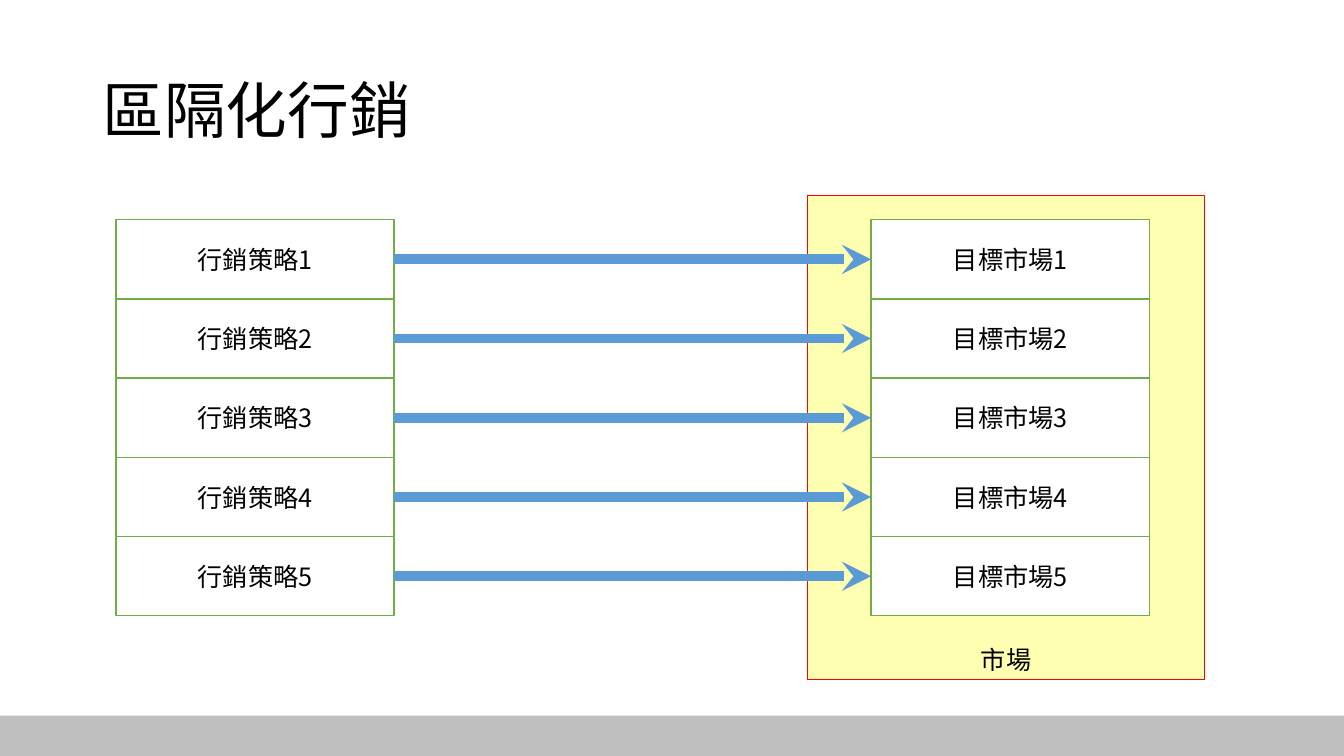
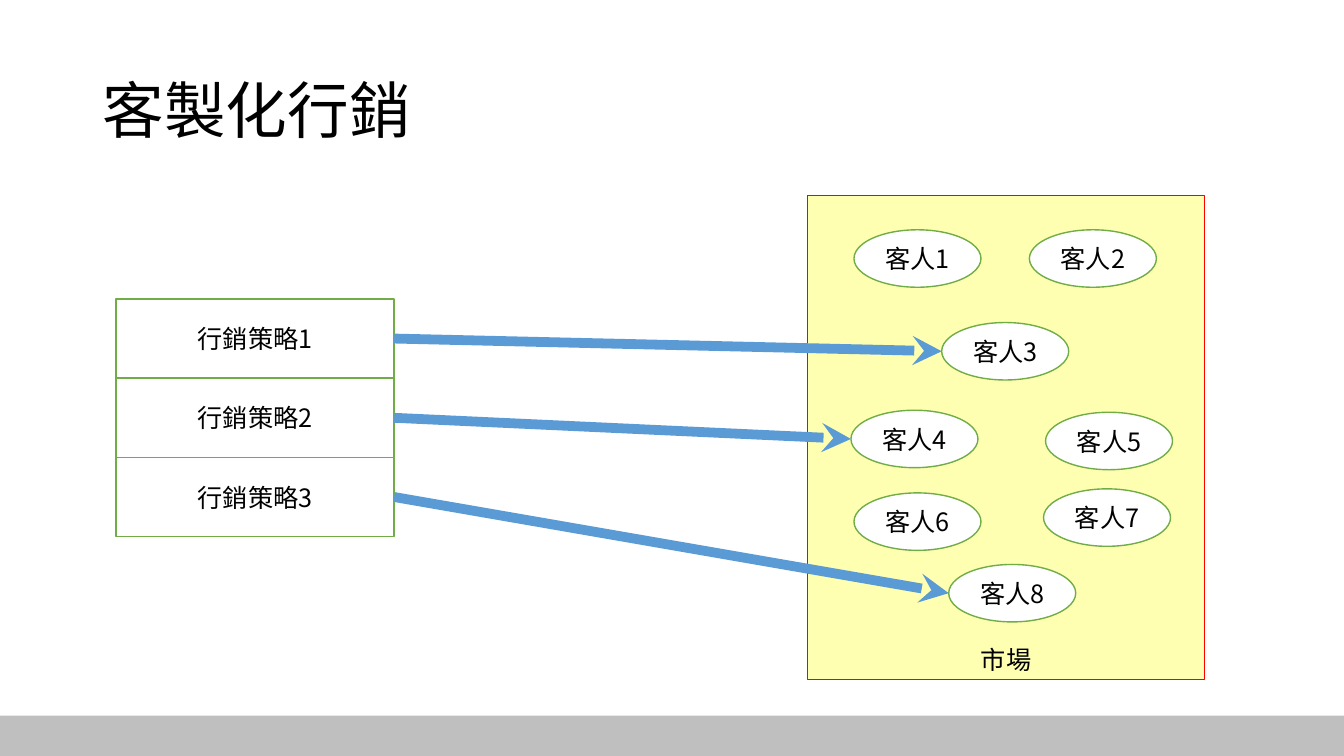
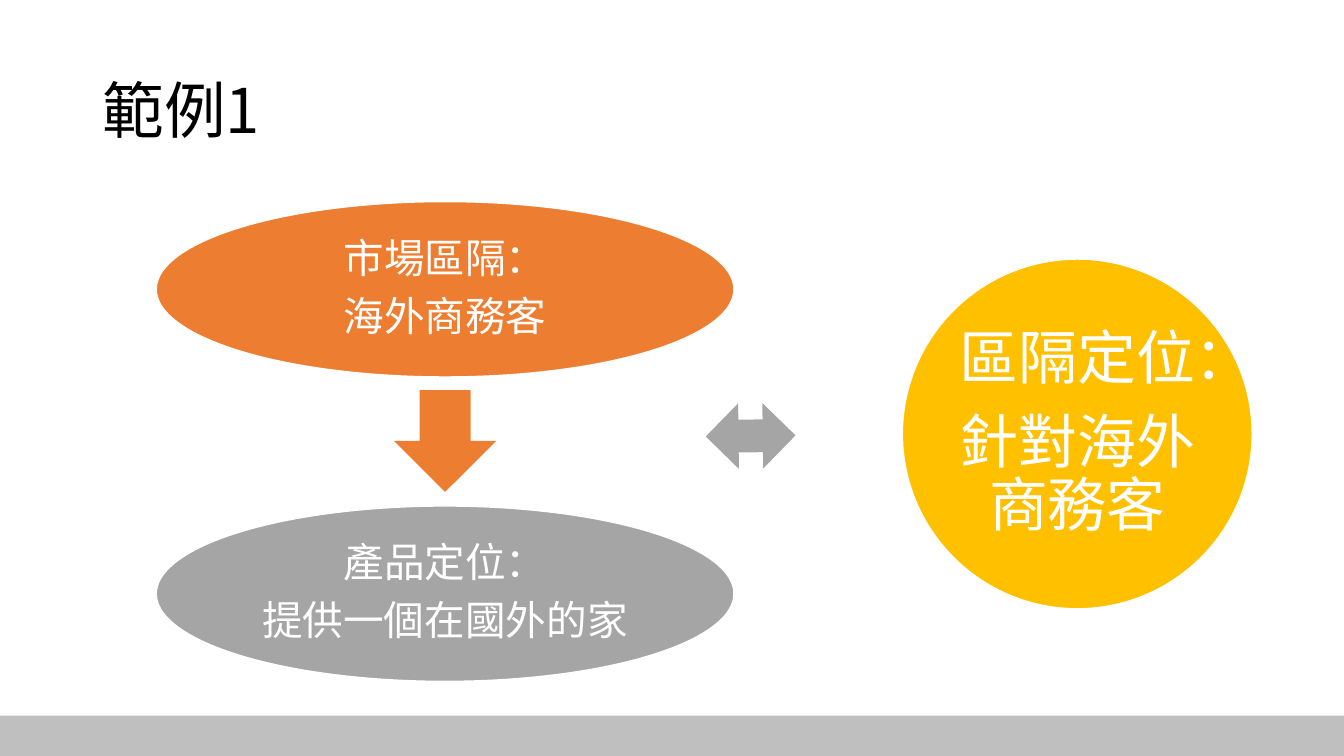
"""Build three slides on segmented and customised marketing."""
from lxml.etree import SubElement
from pptx import Presentation
from pptx.dml.color import RGBColor as Rgb
from pptx.enum.shapes import MSO_CONNECTOR as Conn, MSO_SHAPE as Kind
from pptx.enum.text import MSO_ANCHOR as Anchor, PP_ALIGN as Align
from pptx.oxml.ns import qn
from pptx.util import Inches, Pt

HUES = {
    "black": "000000", "white": "FFFFFF", "band": "BFBFBF", "yellow": "FFFF00",
    "red": "FF0000", "green": "70AD47", "blue": "5B9BD5",
    "orange": "ED7D31", "gray": "A5A5A5", "gold": "FFC000",
}
FONT = "Noto Sans CJK TC"
ROW = 3.93 / 5
TOP = 2.18


def draw(slide, kind, spot, fill=None, edge=None, text="", size=18, hue="black",
         font=FONT, wrap=False, pad=None):
    item = slide.shapes.add_shape(kind, *[Inches(n) for n in spot])
    item.shadow.inherit = False
    if fill:
        item.fill.solid()
        item.fill.fore_color.rgb = Rgb.from_string(HUES[fill])
    else:
        item.fill.background()
    if edge:
        item.line.color.rgb = Rgb.from_string(HUES[edge])
        item.line.width = Pt(1)
    else:
        item.line.fill.background()
    frame = item.text_frame
    frame.word_wrap = wrap
    frame.vertical_anchor = Anchor.MIDDLE
    if pad:
        frame.margin_left = frame.margin_right = Inches(pad)
        frame.margin_top = frame.margin_bottom = Inches(pad)
    if text:
        frame.text = text
        for para in frame.paragraphs:
            para.alignment = Align.CENTER
            for run in para.runs:
                run.font.name = font
                run.font.size = Pt(size)
                run.font.color.rgb = Rgb.from_string(HUES[hue])
    return item


def link(slide, start, end):
    line = slide.shapes.add_connector(Conn.STRAIGHT, 0, 0, 0, 0)
    line.begin_connect(start, 3)
    if end.auto_shape_type == Kind.OVAL:
        line.end_x, line.end_y = end.left, end.top + end.height // 2
    else:
        line.end_connect(end, 1)
    line.line.color.rgb = Rgb.from_string(HUES["blue"])
    line.line.width = Pt(7)
    SubElement(line.line._get_or_add_ln(), qn("a:tailEnd"), type="stealth")
    SubElement(line._element.spPr, qn("a:effectLst"))


deck = Presentation()
deck.slide_width, deck.slide_height = Inches(13.33), Inches(7.5)

pages = []
for title in ["區隔化行銷", "客製化行銷", "範例1"]:
    page = deck.slides.add_slide(deck.slide_layouts[6])
    draw(page, Kind.RECTANGLE, (0, 7.1, 13.33, 0.4), "band")
    box = page.shapes.add_textbox(Inches(0.92), Inches(0.4), Inches(11.5), Inches(1.45))
    box.text_frame.word_wrap = True
    box.text_frame.vertical_anchor = Anchor.MIDDLE
    box.text_frame.text = title
    para = box.text_frame.paragraphs[0]
    para.line_spacing = 0.9
    para.runs[0].font.name = FONT
    para.runs[0].font.size = Pt(44)
    para.runs[0].font.color.rgb = Rgb.from_string(HUES["black"])
    pages.append(page)
split, custom, case = pages

for page in (split, custom):
    market = draw(page, Kind.RECTANGLE, (8.01, 1.94, 3.94, 4.8), "yellow", "red", "市場")
    market.text_frame.vertical_anchor = Anchor.BOTTOM
    tint = market.fill._xPr.find(qn("a:solidFill"))[0]
    SubElement(tint, qn("a:alpha"), val="30000")

for row in range(5):
    plan, goal = [
        draw(split, Kind.RECTANGLE, (left, TOP + row * ROW, 2.76, ROW), "white", "green",
             f"{name}{row + 1}")
        for left, name in [(1.15, "行銷策略"), (8.64, "目標市場")]
    ]
    link(split, plan, goal)

spots = [(8.47, 2.28), (10.21, 2.28), (9.34, 3.2), (8.44, 4.07),
         (10.37, 4.09), (8.47, 4.89), (10.35, 4.85), (9.41, 5.6)]
guests = [
    draw(custom, Kind.OVAL, (left, top, 1.26, 0.57), "white", "green", f"客人{num}", wrap=True)
    for num, (left, top) in enumerate(spots, 1)
]
for num, guest in enumerate([3, 4, 8], 1):
    plan = draw(custom, Kind.RECTANGLE, (1.15, TOP + num * ROW, 2.76, ROW), "white", "green",
                f"行銷策略{num}")
    link(custom, plan, guests[guest - 1])

ovals = [
    ((1.55, 2, 5.73, 1.74), "orange", "市場區隔：\n海外商務客", 29, 0.04),
    ((1.55, 5.02, 5.73, 1.74), "gray", "產品定位：\n提供一個在國外的家", 29, 0.04),
    ((8.95, 2.57, 3.47, 3.47), "gold", "區隔定位：\n針對海外商務客", 42, 0.06),
]
for spot, fill, text, size, pad in ovals:
    oval = draw(case, Kind.OVAL, spot, fill, "white", text, size, "white", "Calibri", True, pad)
    for para in oval.text_frame.paragraphs:
        para.line_spacing = 0.9
        para.space_after = Pt(size * 0.35)
draw(case, Kind.DOWN_ARROW, (3.91, 3.87, 1.01, 1.01), "orange")
swap = draw(case, Kind.LEFT_RIGHT_ARROW, (7, 4, 0.89, 0.65), "gray")
swap.rotation = -0.7

deck.save("out.pptx")
